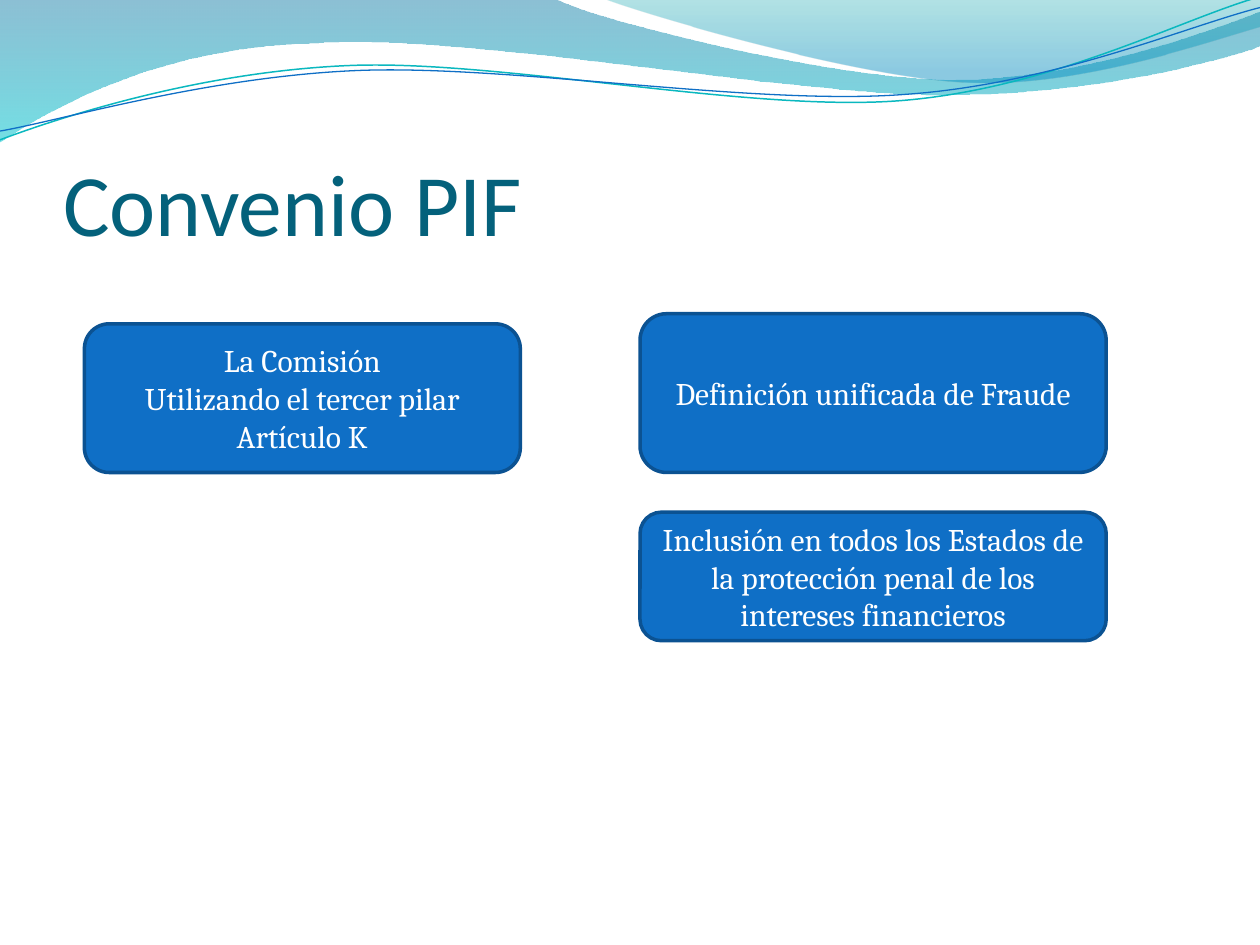
from dataclasses import dataclass
from math import cos, radians, sin

from lxml.etree import SubElement
from pptx import Presentation
from pptx.dml.color import RGBColor
from pptx.enum.shapes import MSO_SHAPE
from pptx.enum.text import MSO_ANCHOR, PP_ALIGN
from pptx.oxml.ns import qn
from pptx.shapes.autoshape import Shape
from pptx.slide import Slide
from pptx.text.text import TextFrame
from pptx.util import Inches, Pt

# Grid of 100 columns by 75 rows; one cell is a tenth of an inch
CELL = Inches(0.1)
COLUMNS, ROWS = 100, 75
TILT = -2.7  # degrees, for the thin threads

COLORS = {
    "title": "04617B", "box": "0F6FC6", "edge": "0B5292", "text": "FFFFFF",
    "deep": "0074A1", "aqua": "00C6CF", "teal": "00A1A9", "sky": "008BBF",
    "thread": "0AB8BF",
}

Point = tuple[float, float]


@dataclass
class Stop:
    position: float
    color: str
    opacity: int


@dataclass
class Outline:
    start: Point
    segments: list[tuple[Point, ...]]  # one point: line; three points: curve


@dataclass
class Wave:
    outline: Outline
    stops: tuple[Stop, Stop]


@dataclass
class Thread:
    outline: Outline
    center: Point
    color: str
    width: float


@dataclass
class Box:
    column: float
    row: float
    columns: float
    rows: float
    lines: list[str]


WAVES = [
    Wave(Outline((0, 0), [
        ((44, -0.1),),
        ((47.6, 1.7), (66.4, 6.3), (75.8, 6.3)),
        ((85.3, 6.3), (95.8, 2.6), (100, 0.9)),
        ((100.1, 3.6),),
        ((98.3, 4.4), (87, 7.6), (74.6, 7.5)),
        ((62.2, 7.5), (38.2, 2.8), (25.7, 3.4)),
        ((12.9, 3.6), (4.6, 8.3), (-0.1, 11.3)),
    ]), (Stop(0, "deep", 45), Stop(1, "aqua", 55))),
    Wave(Outline((47.9, -0.1), [
        ((50.9, 1.1), (68.2, 6.2), (76.9, 6.5)),
        ((85.6, 6.9), (96.1, 3.2), (100, 2.1)),
        ((100, 0),),
    ]), (Stop(0, "teal", 30), Stop(0.8, "sky", 45))),
]

THREADS = [
    Thread(Outline((0, 11.1), [
        ((4.8, 9.3), (15.8, 5.7), (27.7, 5.2)),
        ((39.5, 4.7), (59.3, 8.9), (71.3, 8)),
        ((83.3, 7.1), (93.8, 1.5), (99.8, -0.2)),
    ]), (49.9, 5.75), "thread", 0.85),
    Thread(Outline((0, 10.4), [
        ((4.7, 9.6), (16.4, 6.1), (28.3, 5.6)),
        ((40.3, 5.1), (59.7, 8.4), (71.7, 7.5)),
        ((83.6, 6.7), (94.1, 2.1), (100, 0.6)),
    ]), (49.95, 5.9), "box", 0.75),
]

BOXES = [
    Box(6.7, 25.7, 34.6, 11.8,
        ["La Comisión", "Utilizando el tercer pilar", "Artículo K"]),
    Box(50.8, 24.9, 37, 12.6, ["Definición unificada de Fraude"]),
    Box(50.8, 40.65, 37, 10.2,
        ["Inclusión en todos los Estados de la protección penal "
         "de los intereses financieros"]),
]


def rgb(name: str) -> RGBColor:
    return RGBColor.from_string(COLORS[name])


def cells(*counts: float) -> list[int]:
    return [round(count * CELL) for count in counts]


def turn(point: Point, center: Point, degrees: float) -> Point:
    angle = radians(degrees)
    x, y = point[0] - center[0], point[1] - center[1]
    return (center[0] + x * cos(angle) - y * sin(angle),
            center[1] + x * sin(angle) + y * cos(angle))


def draw_outline(page: Slide, outline: Outline, close: bool) -> Shape:
    builder = page.shapes.build_freeform(*cells(*outline.start), scale=1)
    points = [cells(*point) for part in outline.segments for point in part]
    builder.add_line_segments(points, close=close)
    shape = builder.convert_to_shape()
    shape.shadow.inherit = False
    # Merge each run of three vertices of a curved segment into one curve
    vertices = iter(list(shape._element.iter(qn("a:lnTo"))))
    for part in outline.segments:
        first, *others = [next(vertices) for _ in part]
        if others:
            first.tag = qn("a:cubicBezTo")
            for vertex in others:
                first.append(vertex[0])
                vertex.getparent().remove(vertex)
    return shape


def draw_wave(page: Slide, wave: Wave) -> None:
    shape = draw_outline(page, wave.outline, close=True)
    shape.line.fill.background()
    shape.fill.gradient()
    shape.fill.gradient_angle = 270  # downwards
    for target, stop in zip(shape.fill.gradient_stops, wave.stops):
        target.position = stop.position
        target.color.rgb = rgb(stop.color)
    for color, stop in zip(shape._element.spPr.iter(qn("a:srgbClr")),
                           wave.stops):
        SubElement(color, qn("a:alpha"), val=str(stop.opacity * 1000))


def draw_thread(page: Slide, thread: Thread) -> None:
    level = Outline(
        turn(thread.outline.start, thread.center, -TILT),
        [tuple(turn(point, thread.center, -TILT) for point in part)
         for part in thread.outline.segments])
    shape = draw_outline(page, level, close=False)
    shape.rotation = TILT
    shape.fill.background()
    shape.line.color.rgb = rgb(thread.color)
    shape.line.width = Pt(thread.width)


def write(frame: TextFrame, lines: list[str], font: str, size: int,
          color: str, align: PP_ALIGN) -> None:
    frame.word_wrap = True
    for index, line in enumerate(lines):
        para = frame.add_paragraph() if index else frame.paragraphs[0]
        para.alignment = align
        span = para.add_run()
        span.text = line
        span.font.name = font
        span.font.size = Pt(size)
        span.font.color.rgb = rgb(color)


def draw_title(page: Slide, text: str) -> None:
    frame = page.shapes.add_textbox(*cells(5, 7.65, 90.8, 12.5)).text_frame
    frame.margin_left = frame.margin_right = frame.margin_bottom = 0
    frame.vertical_anchor = MSO_ANCHOR.BOTTOM
    write(frame, [text], "Calibri", 50, "title", PP_ALIGN.LEFT)


def draw_box(page: Slide, box: Box) -> None:
    shape = page.shapes.add_shape(
        MSO_SHAPE.ROUNDED_RECTANGLE,
        *cells(box.column, box.row, box.columns, box.rows))
    shape.shadow.inherit = False
    shape.fill.solid()
    shape.fill.fore_color.rgb = rgb("box")
    shape.line.color.rgb = rgb("edge")
    shape.line.width = Pt(2)
    shape.text_frame.vertical_anchor = MSO_ANCHOR.MIDDLE
    write(shape.text_frame, box.lines, "Cambria", 18, "text", PP_ALIGN.CENTER)


def main() -> None:
    deck = Presentation()
    deck.slide_width, deck.slide_height = cells(COLUMNS, ROWS)
    page = deck.slides.add_slide(deck.slide_layouts[6])
    # Waves and threads along the top edge
    for wave in WAVES:
        draw_wave(page, wave)
    for thread in THREADS:
        draw_thread(page, thread)
    # Title and statement boxes
    draw_title(page, "Convenio PIF")
    for box in BOXES:
        draw_box(page, box)
    deck.save("out.pptx")


if __name__ == "__main__":
    main()
